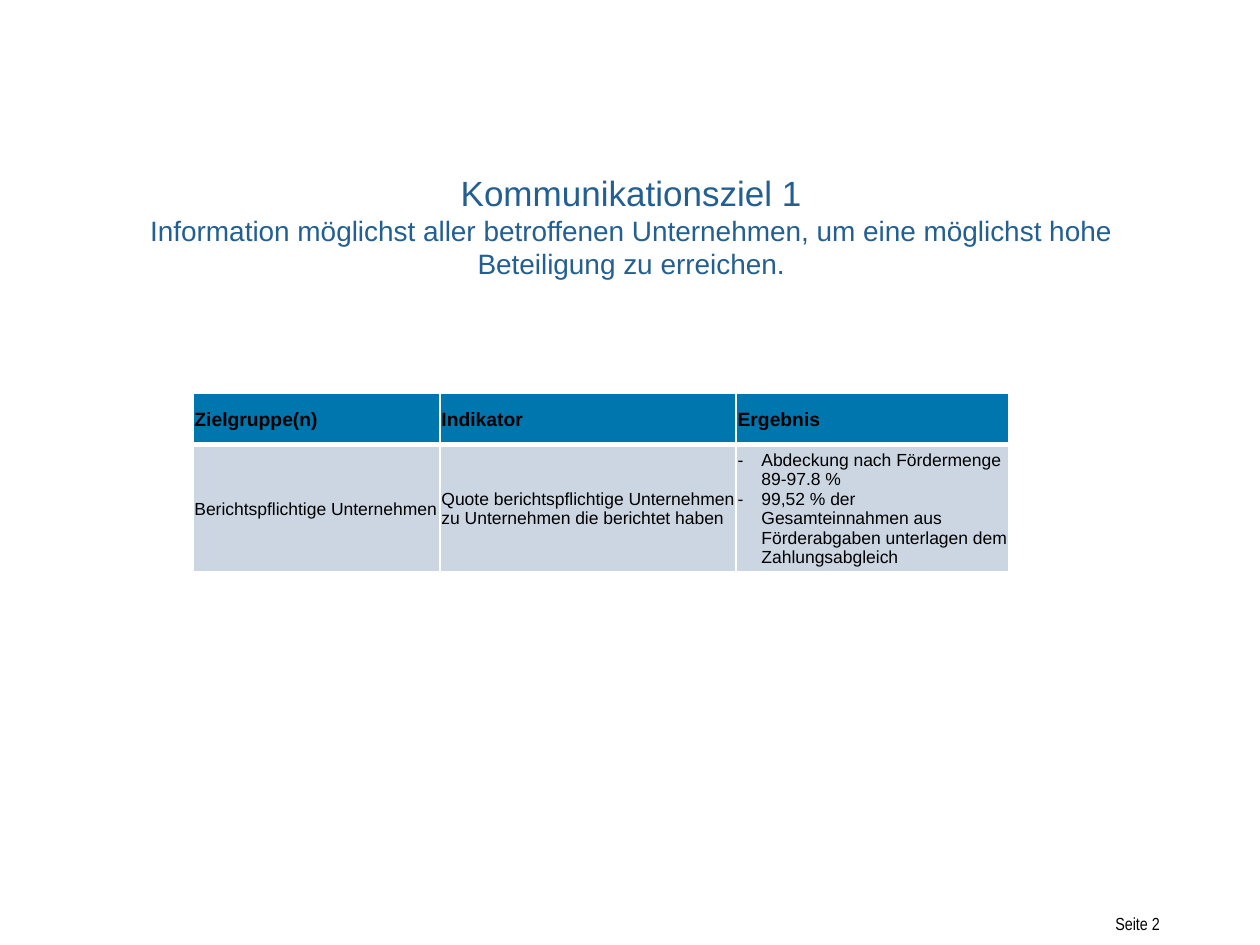
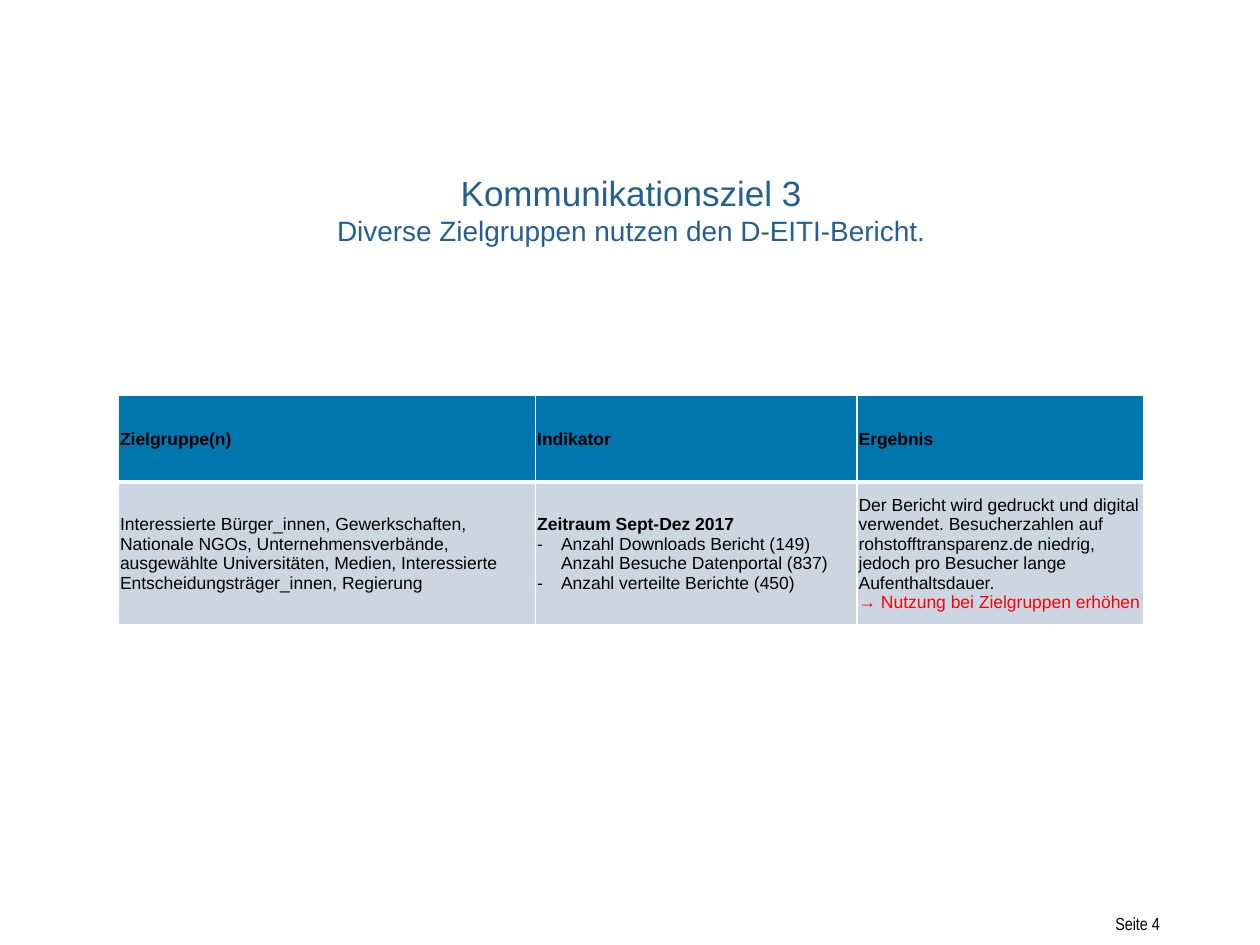
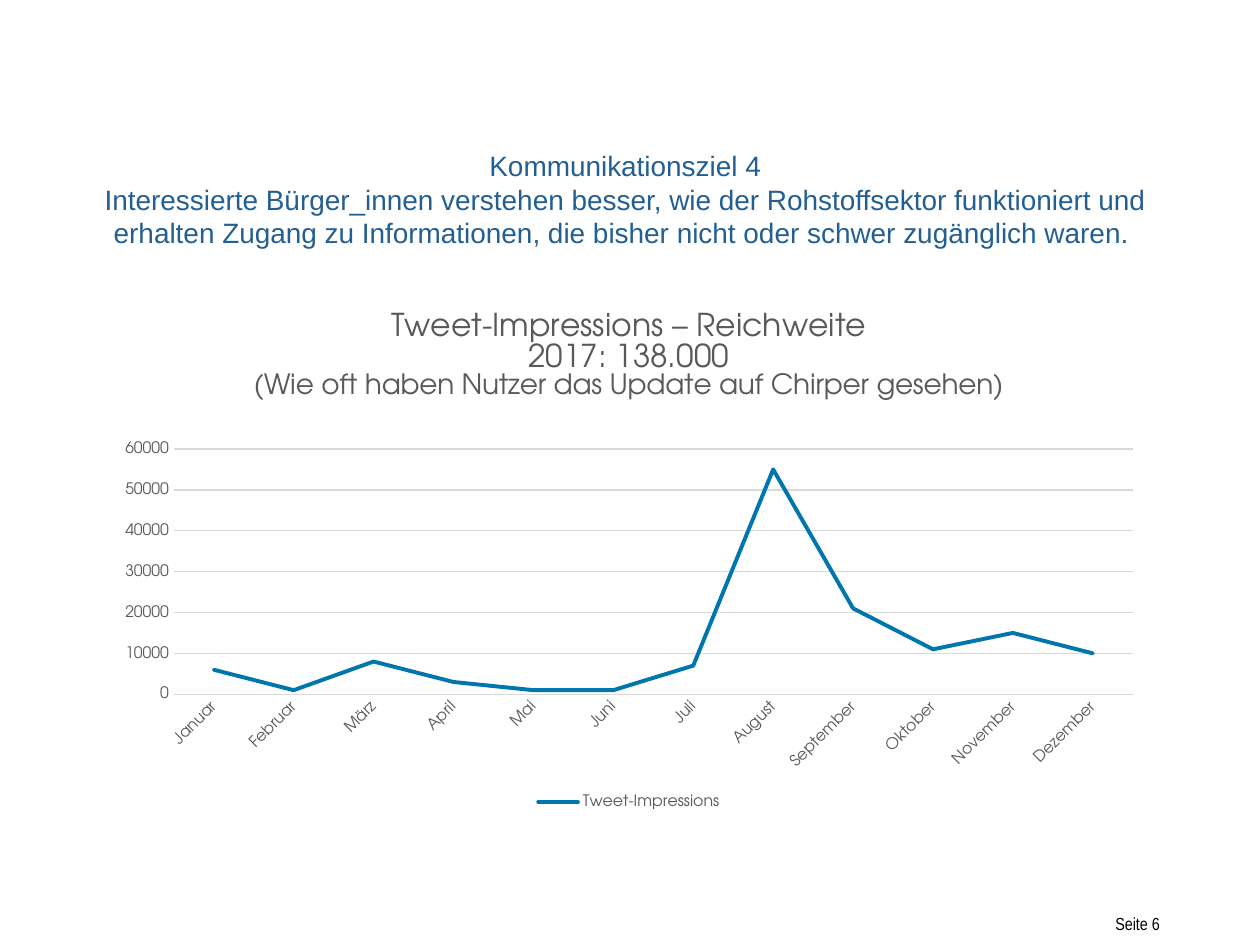
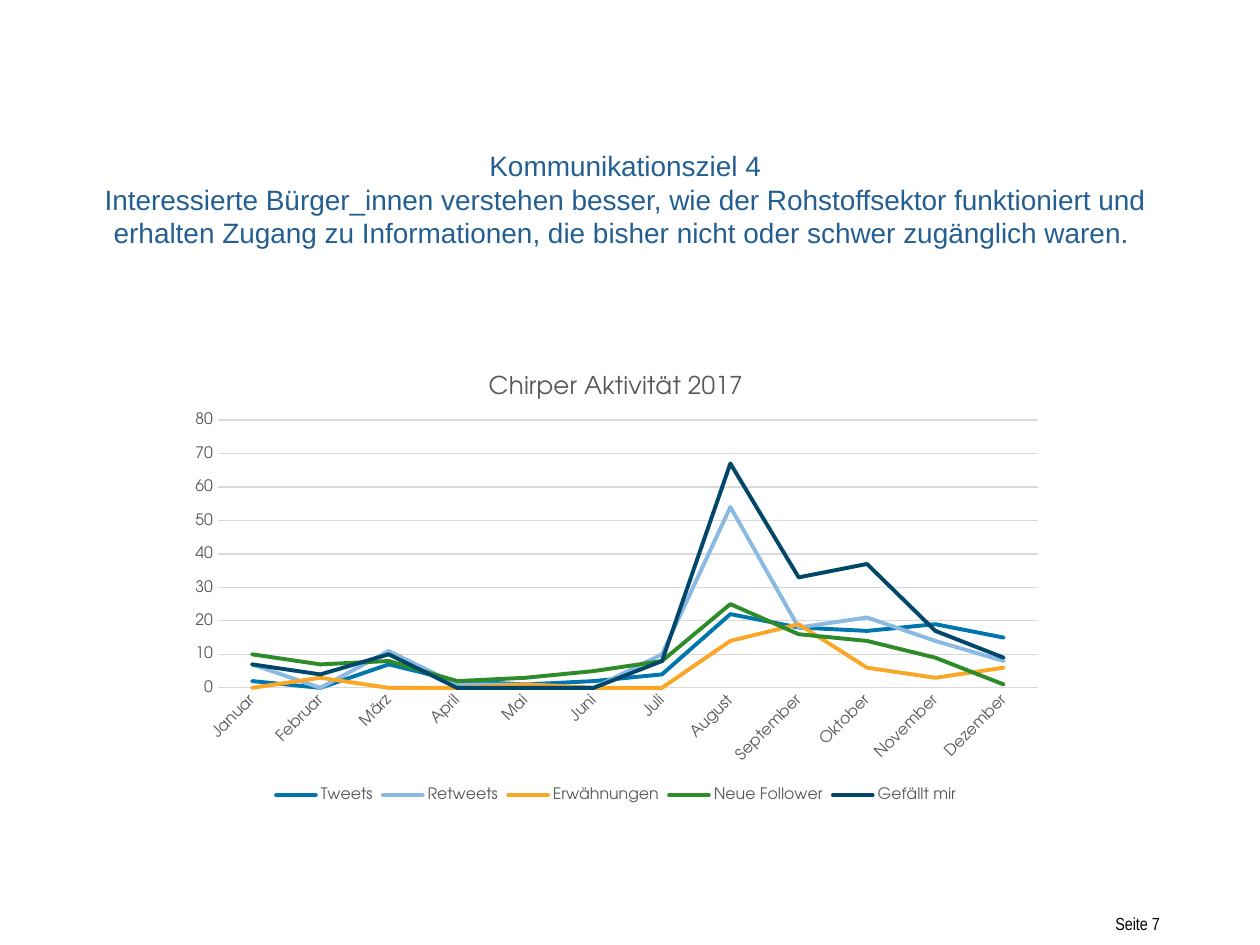
import pptx
import pptx.chart.data
import pptx.dml.color
import pptx.enum.chart
import pptx.enum.shapes
import pptx.enum.text
import pptx.oxml
import pptx.oxml.ns
import pptx.util
import lxml.etree

Cm = pptx.util.Cm
Pt = pptx.util.Pt
ALIGN = pptx.enum.text.PP_ALIGN

FONT, FOOTER_FONT, CHART_FONT = "Arial", "Arial Narrow", "TeX Gyre Adventor"
WHITE, BLACK, RED, TITLE_BLUE = "FFFFFF", "000000", "FF0000", "245F92"
HEADER_FILL, BODY_FILL = "0076AF", "CCD6E3"
CHART_GREY, GRID_GREY = "595959", "D9D9D9"
SERIES_COLOURS = ["0076AF", "8AB9E2", "FAA627", "2D8B2A", "004769"]

HEADERS = ["Zielgruppe(n)", "Indikator", "Ergebnis"]
MONTHS = ["Januar", "Februar", "März", "April", "Mai", "Juni", "Juli", "August",
          "September", "Oktober", "November", "Dezember"]
GOAL_FOUR = [
    ("Kommunikationsziel 4", 16),
    ("Interessierte Bürger_innen verstehen besser, wie der Rohstoffsektor funktioniert und "
     "erhalten Zugang zu Informationen, die bisher nicht oder schwer zugänglich waren. ", 16),
]

SLIDES = [
    {
        "page": 2,
        "title_at": (1.75, 3.33),
        "title": [
            ("Kommunikationsziel 1", 20),
            ("Information möglichst aller betroffenen Unternehmen, um eine möglichst hohe "
             "Beteiligung zu erreichen.", 16),
        ],
        "table": {
            "at": (3.89, 7.92),
            "columns": [4.98, 5.97, 5.49],
            "rows": [1.04, 2.55],
            "header_size": 11,
            "cells": [
                [{"text": "Berichtspflichtige Unternehmen"}],
                [{"text": "Quote berichtspflichtige Unternehmen zu Unternehmen die berichtet haben"}],
                [{"text": "Abdeckung nach Fördermenge 89-97.8 %", "bullet": True},
                 {"text": "99,52 % der\vGesamteinnahmen aus Förderabgaben unterlagen dem "
                          "Zahlungsabgleich", "bullet": True}],
            ],
        },
    },
    {
        "page": 4,
        "title_at": (1.75, 3.33),
        "title": [
            ("Kommunikationsziel 3", 20),
            ("Diverse Zielgruppen nutzen den D-EITI-Bericht.", 16),
        ],
        "table": {
            "at": (2.39, 7.97),
            "columns": [8.41, 6.48, 5.77],
            "rows": [1.75, 2.87],
            "header_size": 10,
            "cells": [
                [{"text": "Interessierte Bürger_innen, Gewerkschaften, Nationale NGOs, "
                          "Unternehmensverbände, ausgewählte Universitäten, Medien, "
                          "Interessierte Entscheidungsträger_innen, Regierung"}],
                [{"text": "Zeitraum Sept-Dez 2017", "bold": True},
                 {"text": "Anzahl Downloads Bericht (149) Anzahl Besuche Datenportal (837)",
                  "bullet": True},
                 {"text": "Anzahl verteilte Berichte (450)", "bullet": True}],
                [{"text": "Der Bericht wird gedruckt und digital verwendet. Besucherzahlen auf "
                          "rohstofftransparenz.de niedrig, jedoch pro Besucher lange "
                          "Aufenthaltsdauer."},
                 {"text": "→ Nutzung bei Zielgruppen erhöhen", "colour": RED}],
            ],
        },
    },
    {
        "page": 6,
        "title_at": (1.63, 2.87),
        "title": GOAL_FOUR,
        "chart": {
            "box": (2.11, 5.84, 21.13, 10.57),
            "plot_percent": (6.6, 30.4, 91.5, 46.8),
            "title": [("Tweet-Impressions – Reichweite", 18), ("2017: 138.000", 18),
                      ("(Wie oft haben Nutzer das Update auf Chirper gesehen)", 16)],
            "series": {
                "Tweet-Impressions": [6000, 1000, 8000, 3000, 1000, 1000, 7000, 55000,
                                      21000, 11000, 15000, 10000],
            },
            "axis": (60000, 10000),
        },
    },
    {
        "page": 7,
        "title_at": (1.63, 2.87),
        "title": GOAL_FOUR,
        "chart": {
            "box": (3.58, 7.11, 17.68, 9.17),
            "plot_percent": (4.6, 14.8, 93.5, 58.9),
            "title": [("Chirper Aktivität 2017", 14)],
            "series": {
                "Tweets": [2, 0, 7, 2, 1, 2, 4, 22, 18, 17, 19, 15],
                "Retweets": [7, 0, 11, 1, 1, 0, 10, 54, 18, 21, 14, 8],
                "Erwähnungen": [0, 3, 0, 0, 1, 0, 0, 14, 19, 6, 3, 6],
                "Neue Follower": [10, 7, 8, 2, 3, 5, 8, 25, 16, 14, 9, 1],
                "Gefällt mir": [7, 4, 10, 0, 0, 0, 8, 67, 33, 37, 17, 9],
            },
            "axis": (80, 10),
        },
    },
]


def colour(value):
    return pptx.dml.color.RGBColor.from_string(value)


def style_font(font, size, value, name=FONT, bold=False):
    font.name = name
    font.size = Pt(size)
    font.bold = bold
    font.color.rgb = colour(value)


def next_paragraph(text_frame, index):
    return text_frame.add_paragraph() if index else text_frame.paragraphs[0]


def add_lines(text_frame, lines, value, name, alignment):
    for index, (text, size) in enumerate(lines):
        paragraph = next_paragraph(text_frame, index)
        paragraph.text = text
        paragraph.alignment = alignment
        style_font(paragraph.font, size, value, name)


def add_text_box(slide, box, lines, value, name, alignment):
    text_frame = slide.shapes.add_textbox(*map(Cm, box)).text_frame
    text_frame.word_wrap = True
    add_lines(text_frame, lines, value, name, alignment)


def add_logo_field(slide):
    shape = slide.shapes.add_shape(
        pptx.enum.shapes.MSO_SHAPE.RECTANGLE, *map(Cm, (19.1, 0.91, 5.33, 2.03)))
    shape.shadow.inherit = False
    shape.fill.solid()
    shape.fill.fore_color.rgb = colour(WHITE)
    shape.line.color.rgb = colour(WHITE)
    shape.line.width = Pt(0.75)


def add_dash(paragraph):
    properties = paragraph._p.get_or_add_pPr()
    properties.set("marL", str(Cm(0.48)))
    properties.set("indent", str(-Cm(0.48)))
    for tag, attribute, value in (("a:buFont", "typeface", FONT), ("a:buChar", "char", "-")):
        lxml.etree.SubElement(properties, pptx.oxml.ns.qn(tag)).set(attribute, value)


def add_border(cell, side, width):
    cell._tc.get_or_add_tcPr().insert(0, pptx.oxml.parse_xml(
        f'<a:{side} {pptx.oxml.ns.nsdecls("a")} w="{Pt(width)}"><a:solidFill>'
        f'<a:srgbClr val="{WHITE}"/></a:solidFill></a:{side}>'))


def fill_cell(cell, entries, fill, size, alignment):
    cell.fill.solid()
    cell.fill.fore_color.rgb = colour(fill)
    cell.vertical_anchor = pptx.enum.text.MSO_ANCHOR.MIDDLE
    cell.margin_left = cell.margin_top = Cm(0.03)
    cell.margin_right = Cm(0.02)
    cell.margin_bottom = 0
    for index, entry in enumerate(entries):
        paragraph = next_paragraph(cell.text_frame, index)
        paragraph.text = entry["text"]
        paragraph.alignment = alignment
        if entry.get("bullet"):
            add_dash(paragraph)
        style_font(paragraph.font, size, entry.get("colour", BLACK), bold=entry.get("bold", False))


def add_goal_table(slide, content):
    columns, rows = content["columns"], content["rows"]
    box = (*content["at"], sum(columns), sum(rows))
    table = slide.shapes.add_table(len(rows), len(columns), *map(Cm, box)).table
    table.horz_banding = False
    for row, height in zip(table.rows, rows):
        row.height = Cm(height)
    for index, width in enumerate(columns):
        table.columns[index].width = Cm(width)
        header_cell, body_cell = table.cell(0, index), table.cell(1, index)
        header = [{"text": HEADERS[index], "bold": True}]
        fill_cell(header_cell, header, HEADER_FILL, content["header_size"], ALIGN.JUSTIFY)
        fill_cell(body_cell, content["cells"][index], BODY_FILL, 10, ALIGN.LEFT)
        add_border(header_cell, "lnB", 3)
        add_border(body_cell, "lnT", 3)


def place_plot(chart, percentages):
    plot_area = chart.element.xpath("//c:plotArea")[0]
    for layout in plot_area.xpath("c:layout"):
        plot_area.remove(layout)
    fractions = [percentage / 100 for percentage in percentages]
    settings = [("layoutTarget", "inner"), ("xMode", "edge"), ("yMode", "edge"),
                *zip("xywh", fractions)]
    entries = "".join(f'<c:{tag} val="{value}"/>' for tag, value in settings)
    plot_area.insert(0, pptx.oxml.parse_xml(
        f'<c:layout {pptx.oxml.ns.nsdecls("c")}><c:manualLayout>{entries}</c:manualLayout></c:layout>'))


def add_line_chart(slide, content):
    data = pptx.chart.data.CategoryChartData()
    data.categories = MONTHS
    for name, values in content["series"].items():
        data.add_series(name, values)
    chart = slide.shapes.add_chart(
        pptx.enum.chart.XL_CHART_TYPE.LINE, *map(Cm, content["box"]), data).chart
    style_font(chart.font, 10, BLACK, CHART_FONT)
    chart.has_title = True
    add_lines(chart.chart_title.text_frame, content["title"], CHART_GREY, CHART_FONT, ALIGN.CENTER)
    chart.has_legend = True
    chart.legend.position = pptx.enum.chart.XL_LEGEND_POSITION.BOTTOM
    chart.legend.include_in_layout = False
    style_font(chart.legend.font, 9, CHART_GREY, CHART_FONT)

    category_axis, value_axis = chart.category_axis, chart.value_axis
    for axis in (category_axis, value_axis):
        axis.major_tick_mark = pptx.enum.chart.XL_TICK_MARK.NONE
        style_font(axis.tick_labels.font, 9, CHART_GREY, CHART_FONT)
    chart.element.xpath("//c:catAx/c:txPr/a:bodyPr")[0].set("rot", str(-45 * 60000))
    value_axis.minimum_scale = 0
    value_axis.maximum_scale, value_axis.major_unit = content["axis"]
    value_axis.format.line.fill.background()
    for line in (category_axis.format.line, value_axis.major_gridlines.format.line):
        line.color.rgb = colour(GRID_GREY)
        line.width = Pt(0.75)

    chart.plots[0].vary_by_categories = False
    for series, value in zip(chart.plots[0].series, SERIES_COLOURS):
        series.smooth = False
        series.format.line.color.rgb = colour(value)
        series.format.line.width = Pt(2.25)
    for line in chart.element.xpath("//c:ser/c:spPr/a:ln"):
        line.set("cap", "rnd")
    place_plot(chart, content["plot_percent"])


def main():
    presentation = pptx.Presentation()
    presentation.slide_width, presentation.slide_height = Cm(25.4), Cm(19.05)
    for content in SLIDES:
        slide = presentation.slides.add_slide(presentation.slide_layouts[6])
        add_text_box(slide, (21.06, 18.29, 2.57, 0.69), [(f"Seite {content['page']}", 10)],
                     BLACK, FOOTER_FONT, ALIGN.RIGHT)
        add_logo_field(slide)
        add_text_box(slide, (*content["title_at"], 21.95, 2.26), content["title"],
                     TITLE_BLUE, FONT, ALIGN.CENTER)
        if "table" in content:
            add_goal_table(slide, content["table"])
        if "chart" in content:
            add_line_chart(slide, content["chart"])
    presentation.save("out.pptx")


if __name__ == "__main__":
    main()
